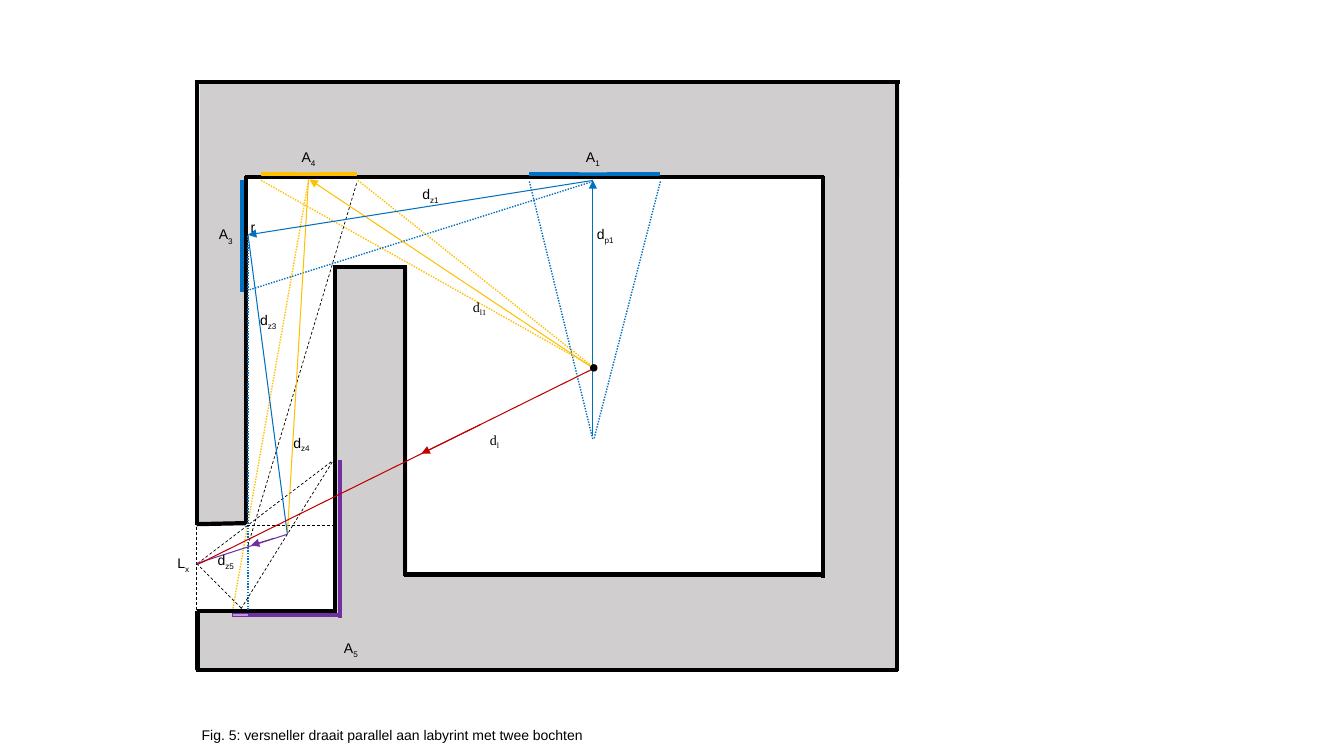
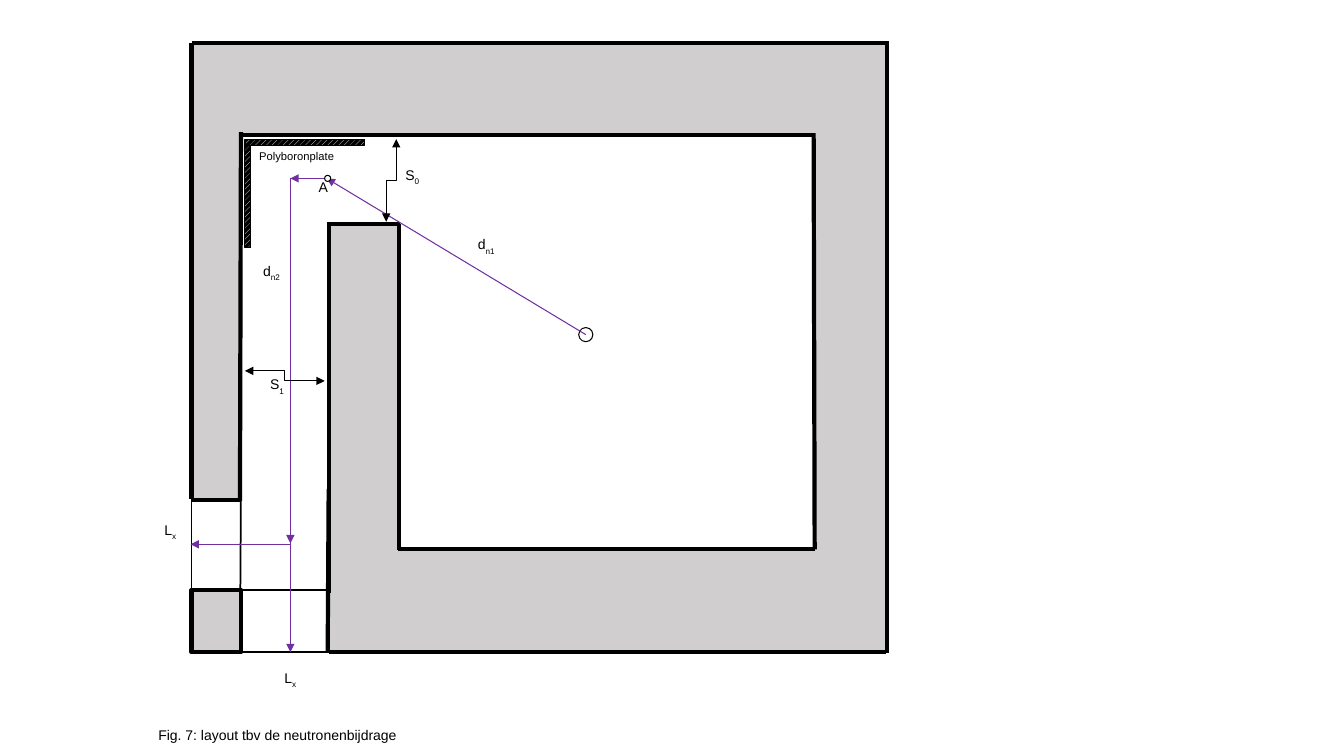
from dataclasses import dataclass
from typing import Any

from lxml.etree import SubElement as Sub
from pptx import Presentation
from pptx.dml.color import RGBColor
from pptx.enum.dml import MSO_LINE as Dash, MSO_PATTERN as Hatch
from pptx.enum.shapes import MSO_CONNECTOR as Link, MSO_SHAPE as Form
from pptx.enum.text import MSO_ANCHOR as Anchor, MSO_AUTO_SIZE as Fit, PP_ALIGN as Align
from pptx.oxml.ns import qn
from pptx.util import Inches, Pt

BLACK = RGBColor(0x00, 0x00, 0x00)
WHITE = RGBColor(0xFF, 0xFF, 0xFF)
GREY = RGBColor(0xD0, 0xCE, 0xCE)
BLUE = RGBColor(0x00, 0x70, 0xC0)
GOLD = RGBColor(0xFF, 0xC0, 0x00)
PURPLE = RGBColor(0x70, 0x30, 0xA0)
LILAC = RGBColor(0xC1, 0x98, 0xE0)
RED = RGBColor(0xC0, 0x00, 0x00)
SANS, SERIF = "Arial", "Times New Roman"
THICK, THIN, FINE = 3, 0.75, 0.5
CAPTION = (7.16, 5, 0.27)


def style(run, size=10, face=SANS):
    run.font.size = Pt(size)
    run.font.name = face
    run.font.color.rgb = BLACK


def frame(text, anchor, align):
    text.margin_left = text.margin_right = 0
    text.auto_size = Fit.NONE
    text.word_wrap = True
    text.vertical_anchor = anchor
    text.paragraphs[0].alignment = align


@dataclass
class Plan:
    shapes: Any
    left: float
    top: float

    def spot(self, x, y):
        return Inches(self.left + x), Inches(self.top + y)

    def line(self, ends, color=BLACK, width=THIN, dash=None, head=False, tail=False,
             kind=Link.STRAIGHT):
        link = self.shapes.add_connector(kind, *self.spot(*ends[:2]), *self.spot(*ends[2:]))
        link.line.color.rgb = color
        link.line.width = Pt(width)
        if dash:
            link.line.dash_style = dash
        props = link._element.spPr
        stroke = props.find(qn("a:ln"))
        for tag, shown in (("a:headEnd", head), ("a:tailEnd", tail)):
            if shown:
                Sub(stroke, qn(tag), type="triangle")
        Sub(props, qn("a:effectLst"))
        return link

    def lines(self, rows, **look):
        for ends in rows:
            self.line(ends, **look)

    def block(self, box, fill=GREY, edge=None, width=THIN, form=Form.RECTANGLE):
        x, y, w, h = box
        shape = self.shapes.add_shape(form, *self.spot(x, y), Inches(w), Inches(h))
        shape.shadow.inherit = False
        shape.fill.solid()
        shape.fill.fore_color.rgb = fill
        if edge is None:
            shape.line.fill.background()
        else:
            shape.line.color.rgb = edge
            shape.line.width = Pt(width)
        return shape

    def blocks(self, rows, **look):
        for box in rows:
            self.block(box, **look)

    def plate(self, box):
        fill = self.block(box, edge=BLACK).fill
        fill.patterned()
        fill.pattern = Hatch.WIDE_UPWARD_DIAGONAL
        fill.fore_color.rgb = WHITE
        fill.back_color.rgb = BLACK

    def label(self, box, base, sub="", drop=30, fill=None, center=False, size=10, face=SANS):
        x, y, w, h = box
        if fill is None:
            shape = self.shapes.add_textbox(*self.spot(x, y), Inches(w), Inches(h))
        else:
            shape = self.block(box, fill)
        text = shape.text_frame
        text.text = base
        text.margin_top = text.margin_bottom = 0
        frame(text, Anchor.MIDDLE if center else Anchor.TOP,
              Align.CENTER if center else Align.LEFT)
        para = text.paragraphs[0]
        if sub:
            run = para.add_run()
            run.text = sub
            run._r.get_or_add_rPr().set("baseline", str(-1000 * drop))
        for run in para.runs:
            style(run, size, face)


def start(deck, title, left):
    slide = deck.slides.add_slide(deck.slide_layouts[5])
    head = slide.shapes.title
    top, width, height = CAPTION
    head.left, head.top = Inches(left), Inches(top)
    head.width, head.height = Inches(width), Inches(height)
    text = head.text_frame
    text.text = title
    frame(text, Anchor.MIDDLE, Align.LEFT)
    style(text.paragraphs[0].runs[0])
    return slide.shapes.add_group_shape().shapes


def beams(shapes, left, top):
    plan = Plan(shapes, left, top)
    plan.blocks([
        (2.34, 2.64, 0.7, 4.01), (3, 5.72, 4.25, 0.91), (0.97, 6.07, 1.43, 0.59),
        (0.96, 1.74, 0.48, 3.46), (7.17, 1.73, 0.74, 4.92), (0.98, 0.82, 6.94, 0.95),
    ])
    plan.lines([
        (1.44, 5.19, 0.95, 5.2), (7.17, 1.76, 1.43, 1.76), (2.32, 2.63, 2.32, 6.09),
        (2.32, 6.06, 0.95, 6.06), (2.32, 2.65, 3.04, 2.65), (7.16, 5.73, 7.16, 1.75),
        (3.01, 5.7, 7.16, 5.7), (7.9, 0.8, 7.9, 6.66), (0.95, 5.21, 0.95, 0.8),
        (0.96, 6.65, 0.96, 6.06), (7.91, 6.65, 0.94, 6.65), (3.02, 2.64, 3.02, 5.71),
        (1.44, 5.2, 1.44, 1.75), (0.93, 0.81, 7.93, 0.81),
    ], width=THICK)

    for box, fill, edge in (
        ((4.25, 1.71, 1.29, 0.03), BLUE, BLUE),
        ((1.39, 1.79, 0.03, 1.1), BLUE, BLUE),
        ((1.59, 1.71, 0.95, 0.03), GOLD, GOLD),
        ((1.46, 6.09, 0.91, 0.03), PURPLE, PURPLE),
        ((2.36, 4.57, 0.03, 1.56), PURPLE, PURPLE),
        ((1.31, 6.09, 0.16, 0.03), LILAC, PURPLE),
    ):
        plan.block(box, fill, edge)

    plan.lines([
        (2.55, 1.79, 4.88, 3.64), (1.59, 1.79, 4.88, 3.64), (2.06, 1.79, 1.31, 6.04),
    ], color=GOLD, width=1, dash=Dash.ROUND_DOT)
    plan.lines([
        (4.88, 1.8, 1.46, 2.88), (5.55, 1.8, 4.89, 4.36), (4.25, 1.8, 4.88, 4.36),
        (1.46, 6.05, 1.46, 2.33),
    ], color=BLUE, width=1, dash=Dash.ROUND_DOT)
    plan.lines([
        (1.46, 5.41, 2.54, 1.81), (0.96, 5.59, 2.3, 4.57), (0.95, 5.59, 1.39, 6.03),
        (1.39, 6.04, 2.31, 4.56), (1.45, 5.21, 2.32, 5.21), (0.95, 5.18, 0.95, 6.05),
    ], width=FINE, dash=Dash.DASH)

    plan.line((2.07, 1.78, 4.88, 3.65), GOLD, head=True)
    plan.line((2.06, 1.78, 1.85, 5.3), GOLD)
    plan.line((1.85, 5.3, 1.46, 2.33), BLUE)
    plan.line((4.88, 1.79, 4.88, 4.33), BLUE, head=True)
    plan.line((4.88, 1.79, 1.46, 2.33), BLUE, tail=True)
    plan.line((1.85, 5.3, 0.95, 5.59), PURPLE)
    plan.line((1.72, 5.34, 1.49, 5.41), PURPLE, tail=True)
    plan.line((4.88, 3.66, 0.96, 5.6), RED)
    plan.line((3.77, 4.21, 3.18, 4.5), RED, tail=True)
    plan.block((4.86, 3.62, 0.06, 0.06), BLACK, BLACK, 1, Form.OVAL)

    for x, y, sub in ((4.74, 1.43, "1"), (1.1, 2.2, "3"), (1.92, 1.43, "4"), (2.34, 6.3, "5")):
        plan.label((x, y, 0.28, 0.28), "A", sub, fill=GREY, center=True)
    plan.label((1.46, 2.19, 0.1, 0.12), "r", center=True)
    plan.label((3.19, 1.84, 0.21, 0.17), "d", "z1")
    plan.label((4.92, 2.24, 0.25, 0.17), "d", "p1")
    plan.label((1.58, 3.09, 0.17, 0.17), "d", "z3")
    plan.label((1.91, 4.31, 0.18, 0.17), "d", "z4", 25)
    plan.label((1.15, 5.48, 0.18, 0.17), "d", "z5", center=True)
    plan.label((0.76, 5.5, 0.14, 0.17), "L", "x")
    plan.label((3.69, 2.96, 0.18, 0.19), "d", "l1", 25, face=SERIF)
    plan.label((3.86, 4.28, 0.12, 0.16), "d", "l", 25, face=SERIF)


def layout(shapes, left, top):
    plan = Plan(shapes, left, top)
    plan.blocks([
        (2.27, 5.44, 5.08, 1.01), (0.91, 1.28, 0.47, 3.68), (2.28, 2.22, 0.68, 3.27),
        (7.08, 1.29, 0.72, 5.17), (0.92, 0.43, 6.89, 0.91),
    ])
    plan.lines([
        (2.26, 5.85, 0.89, 5.85), (1.38, 6.48, 1.39, 4.85),
        (0.9, 6.48, 0.9, 4.89), (2.29, 6.47, 0.9, 6.47),
    ], width=1.25)
    plan.lines([
        (7.8, 0.41, 7.8, 6.48), (2.26, 2.2, 2.26, 5.88), (2.26, 2.22, 2.97, 2.22),
        (7.79, 6.47, 2.26, 6.47), (2.96, 2.22, 2.96, 5.46), (1.38, 4.97, 1.39, 1.31),
        (1.39, 4.96, 0.9, 4.96), (7.08, 1.34, 1.38, 1.34), (7.08, 5.45, 7.07, 1.32),
        (2.95, 5.45, 7.08, 5.45), (0.9, 4.95, 0.9, 0.43), (0.9, 0.43, 7.79, 0.43),
        (2.25, 6.47, 2.26, 4.85),
    ], width=THICK)
    plan.block((0.9, 5.85, 0.49, 0.62), GREY, BLACK, THICK)

    plan.block((4.74, 3.25, 0.14, 0.14), WHITE, BLACK, form=Form.OVAL)
    plan.lines([
        (4.81, 3.32, 2.24, 1.77), (1.88, 5.4, 0.89, 5.4), (1.88, 5.28, 1.88, 6.47),
        (2.26, 1.77, 1.88, 1.77), (1.88, 1.77, 1.88, 5.39),
    ], color=PURPLE, tail=True)
    plan.block((2.22, 1.74, 0.06, 0.06), WHITE, BLACK, form=Form.OVAL)

    plan.plate((1.43, 1.38, 1.19, 0.06))
    plan.plate((1.43, 1.44, 0.06, 1.02))
    plan.label((1.57, 1.48, 1.02, 0.17), "Polyboronplate", fill=WHITE, size=8)

    gap = plan.line((2.47, 1.74, 3.29, 1.84), head=True, tail=True, kind=Link.ELBOW)
    gap._element.spPr.find(qn("a:xfrm")).set("rot", "5400000")
    plan.line((2.22, 3.78, 1.43, 3.68), head=True, tail=True, kind=Link.ELBOW)

    for x, y, w, base, sub in (
        (2.16, 1.77, 0.13, "A", ""),
        (0.63, 5.17, 0.18, "L", "x"),
        (1.82, 6.64, 0.18, "L", "x"),
        (3.74, 2.34, 0.22, "d", "n1"),
        (1.61, 2.6, 0.22, "d", "n2"),
        (3.02, 1.65, 0.26, "S", "0"),
        (1.68, 3.73, 0.26, "S", "1"),
    ):
        plan.label((x, y, w, 0.22), base, sub)


def main():
    deck = Presentation()
    deck.slide_width, deck.slide_height = Inches(13.33), Inches(7.5)
    for title, left, draw in (
        ("Fig. 5: versneller draait parallel aan labyrint met twee bochten", 2, beams),
        ("Fig. 7: layout tbv de neutronenbijdrage", 1.57, layout),
    ):
        draw(start(deck, title, left), 1, 0)
    deck.save("out.pptx")


if __name__ == "__main__":
    main()
